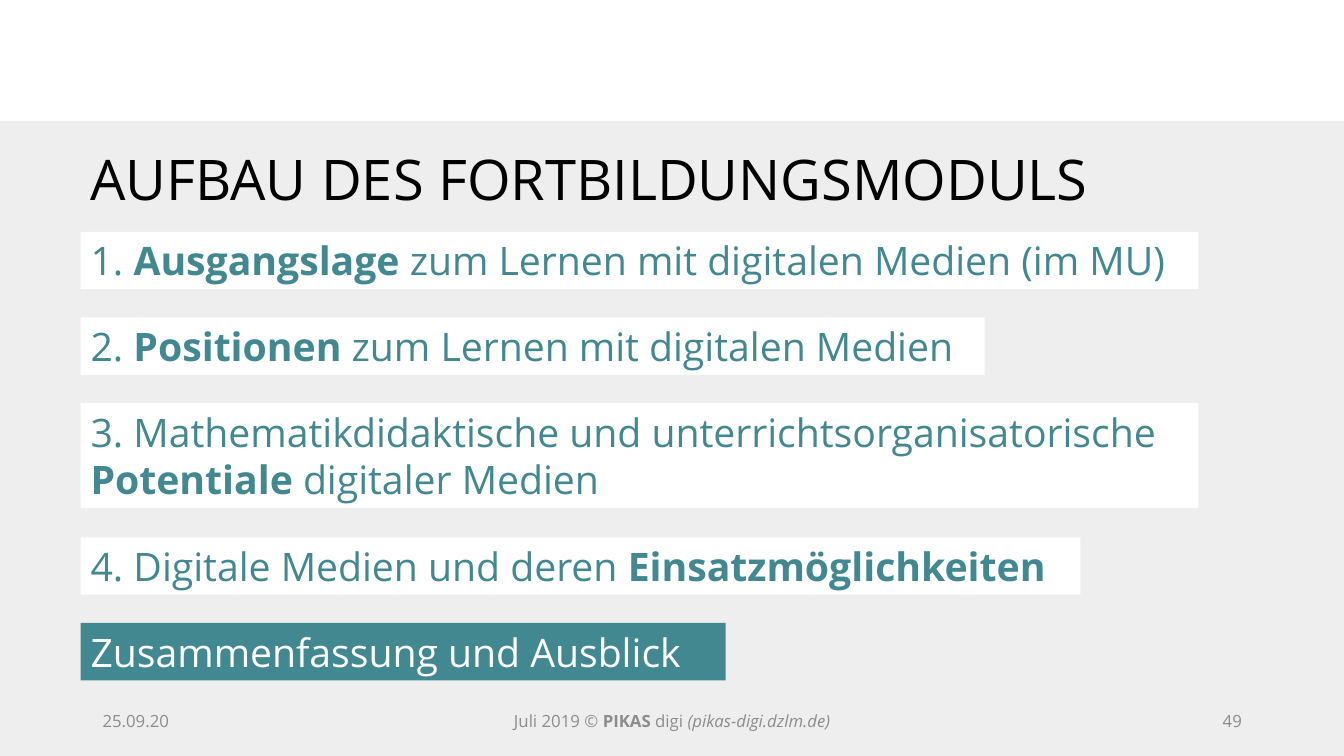
"""Build the overview slide of the training module."""
from typing import NamedTuple

from pptx import Presentation
from pptx.dml.color import RGBColor
from pptx.enum import shapes, text
from pptx.util import Pt

FONT = "Open Sans"
TEAL, WHITE, PALE, GREY, BLACK = "428891", "FFFFFF", "EEEEEE", "8C8C8C", "000000"
LEFT = 57.6
BOLD = {"bold": True}
ITALIC = {"italic": True}
ALIGN = text.PP_ALIGN
ANCHOR = text.MSO_ANCHOR


class Run(NamedTuple):
    words: str
    form: dict = {}


class Bar(NamedTuple):
    top: float
    width: float
    height: float
    runs: list[Run]
    fill: str = WHITE
    ink: str = TEAL


class Label(NamedTuple):
    left: float
    top: float
    width: float
    height: float
    runs: list[Run]
    size: float = 12
    ink: str = GREY
    align: ALIGN = ALIGN.LEFT
    anchor: ANCHOR = ANCHOR.MIDDLE


BARS = [
    Bar(165.6, 798.5, 41, [
        Run("1. "), Run("Ausgangslage", BOLD),
        Run(" zum Lernen mit digitalen Medien (im MU)")]),
    Bar(226.8, 645.8, 41, [
        Run("2. "), Run("Positionen", BOLD),
        Run(" zum Lernen mit digitalen Medien")]),
    Bar(288, 798.5, 74.9, [
        Run("3. Mathematikdidaktische und unterrichtsorganisatorische "),
        Run("Potentiale ", BOLD), Run("digitaler Medien")]),
    Bar(383.8, 714.2, 41, [
        Run("4. Digitale Medien und deren "), Run("Einsatzmöglichkeiten", BOLD)]),
    Bar(445, 460.8, 41, [Run("Zusammenfassung und Ausblick")], TEAL, WHITE),
]

LABELS = [
    Label(LEFT, 99.4, 845.3, 55.4, [Run("AUFBAU DES FORTBILDUNGSMODULS")],
          40, BLACK, anchor=ANCHOR.TOP),
    Label(66.2, 500.4, 216, 28.8, [Run("25.09.20")]),
    Label(318.2, 500.4, 324, 28.8, [
        Run("Juli 2019 © "), Run("PIKAS", BOLD), Run(" digi "),
        Run("(pikas-digi.dzlm.de)", ITALIC)], align=ALIGN.CENTER),
    Label(678.2, 500.4, 216, 28.8, [Run("49")], align=ALIGN.RIGHT),
]


def paint(target, tint: str) -> None:
    """Set a colour from its hex string."""
    target.rgb = RGBColor.from_string(tint)


def block(slide, left: float, top: float, width: float, height: float, tint: str):
    """Draw a plain filled rectangle."""
    shape = slide.shapes.add_shape(
        shapes.MSO_SHAPE.RECTANGLE, Pt(left), Pt(top), Pt(width), Pt(height))
    shape.shadow.inherit = False
    shape.fill.solid()
    paint(shape.fill.fore_color, tint)
    shape.line.fill.background()
    return shape


def write(shape, runs: list[Run], size: float, ink: str,
          align: ALIGN, anchor: ANCHOR) -> None:
    """Fill a shape with one paragraph of formatted runs."""
    frame = shape.text_frame
    frame.word_wrap = True
    frame.vertical_anchor = anchor
    para = frame.paragraphs[0]
    para.alignment = align
    for words, form in runs:
        run = para.add_run()
        run.text = words
        for name, value in {"name": FONT, "size": Pt(size), **form}.items():
            setattr(run.font, name, value)
        paint(run.font.color, ink)


def draw_bar(slide, bar: Bar) -> None:
    """Draw one agenda bar."""
    shape = block(slide, LEFT, bar.top, bar.width, bar.height, bar.fill)
    write(shape, bar.runs, 28, bar.ink, ALIGN.LEFT, ANCHOR.TOP)


def draw_label(slide, label: Label) -> None:
    """Draw one free text."""
    box = slide.shapes.add_textbox(
        Pt(label.left), Pt(label.top), Pt(label.width), Pt(label.height))
    write(box, label.runs, label.size, label.ink, label.align, label.anchor)


def main() -> None:
    """Assemble and save the slide."""
    deck = Presentation()
    deck.slide_width, deck.slide_height = Pt(960), Pt(540)
    slide = deck.slides.add_slide(deck.slide_layouts[6])
    block(slide, 0, 86.4, 960, 453.6, PALE)
    for bar in BARS:
        draw_bar(slide, bar)
    for label in LABELS:
        draw_label(slide, label)
    deck.save("out.pptx")


if __name__ == "__main__":
    main()
